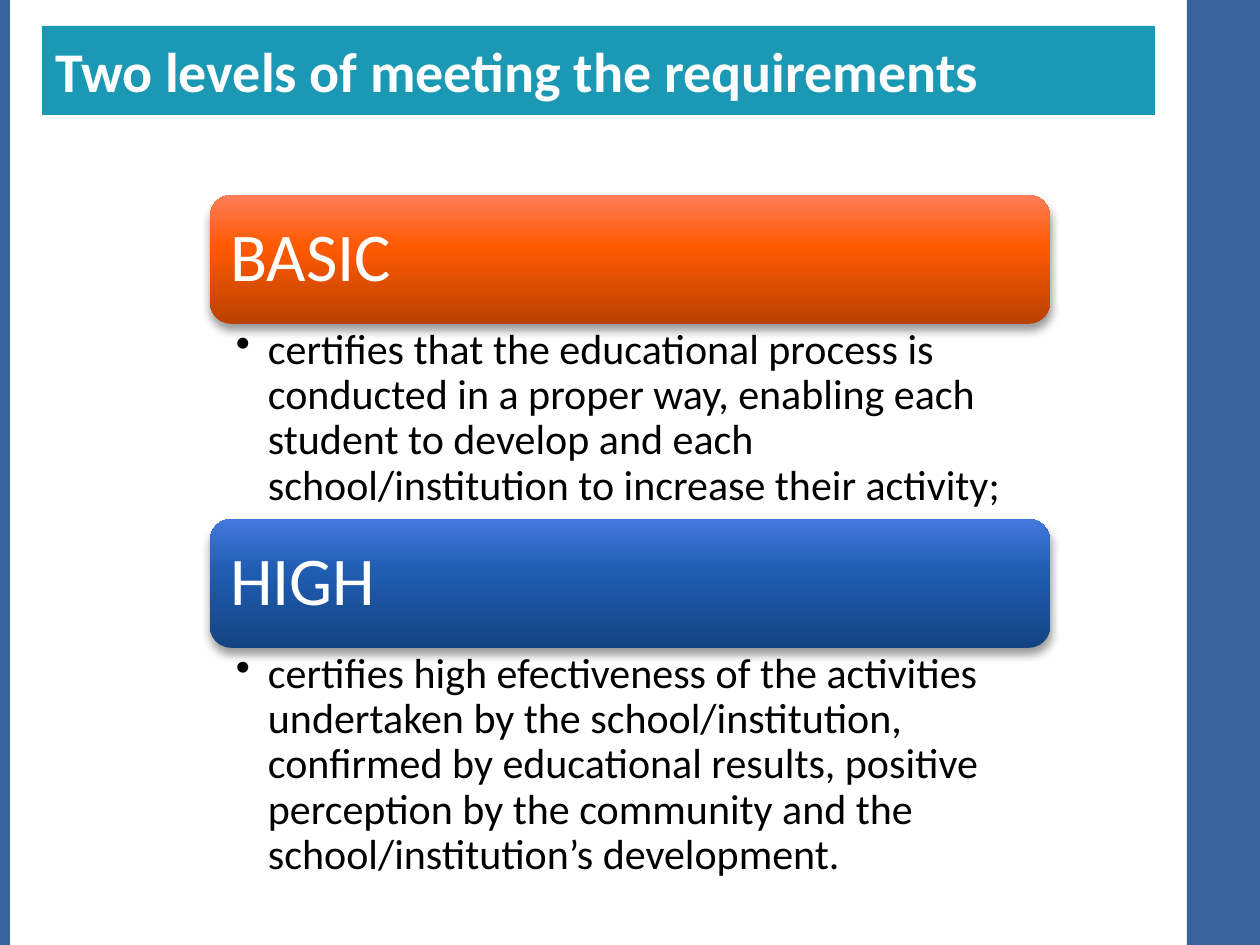
from copy import deepcopy

from lxml import etree
from pptx import Presentation
from pptx.dml.color import RGBColor
from pptx.enum.shapes import MSO_SHAPE
from pptx.enum.text import MSO_ANCHOR, PP_ALIGN
from pptx.oxml.ns import qn
from pptx.util import Pt

RECTANGLE = MSO_SHAPE.RECTANGLE
ROUNDED = MSO_SHAPE.ROUNDED_RECTANGLE
MIDDLE = MSO_ANCHOR.MIDDLE
TOP = MSO_ANCHOR.TOP
LEFT = PP_ALIGN.LEFT

EMU_PER_PX = 914400 / 126
WIDTH, HEIGHT = 1260, 945
FONT = "Calibri"

WHITE = RGBColor(0xFF, 0xFF, 0xFF)
BLACK = RGBColor(0x00, 0x00, 0x00)
SIDE_BLUE = RGBColor(0x39, 0x63, 0x9D)
TEAL = RGBColor(0x1B, 0x99, 0xB4)
ORANGES = [RGBColor(0xB9, 0x41, 0x00), RGBColor(0xFF, 0x5A, 0x01), RGBColor(0xFF, 0x7D, 0x59)]
BLUES = [RGBColor(0x15, 0x43, 0x82), RGBColor(0x1F, 0x5D, 0xB2), RGBColor(0x45, 0x78, 0xDB)]
GRADIENT_POSITIONS = [0, 0.6, 1]

HEADER_HEIGHT = 129
LEVELS = [
    ("BASIC", ORANGES, 195,
     "certifies that the educational process is conducted in a proper way, enabling each "
     "student to develop and each school/institution to increase their activity;"),
    ("HIGH", BLUES, 519,
     "certifies high efectiveness of the activities undertaken by the school/institution, "
     "confirmed by educational results, positive perception by the community and the "
     "school/institution’s development."),
]


def px(length):
    return round(length * EMU_PER_PX)


def add_block(slide, kind, left, top, width, height, color=None):
    shape = slide.shapes.add_shape(kind, px(left), px(top), px(width), px(height))
    shape.shadow.inherit = False
    shape.line.fill.background()
    if color is not None:
        shape.fill.solid()
        shape.fill.fore_color.rgb = color
    return shape


def set_text(shape, text, size, color, margins, anchor, bold=False):
    """Fill a shape with one left-aligned paragraph; margins are left, top, right, bottom."""
    frame = shape.text_frame
    frame.word_wrap = True
    frame.vertical_anchor = anchor
    frame.margin_left, frame.margin_top, frame.margin_right, frame.margin_bottom = map(px, margins)
    frame.text = text
    paragraph = frame.paragraphs[0]
    paragraph.alignment = LEFT
    font = paragraph.runs[0].font
    font.name, font.size, font.bold = FONT, Pt(size), bold
    font.color.rgb = color
    return paragraph


def fill_gradient(shape, colors):
    """Run three colours from the bottom of the shape to its top."""
    shape.fill.gradient()
    shape.fill.gradient_angle = 90
    stop_list = shape._element.spPr.find(qn("a:gradFill")).find(qn("a:gsLst"))
    stop_list.append(deepcopy(stop_list[-1]))
    for stop, position, color in zip(shape.fill.gradient_stops, GRADIENT_POSITIONS, colors):
        stop.position = position
        stop.color.rgb = color


def add_soft_shadow(shape):
    effects = shape._element.spPr.find(qn("a:effectLst"))
    shadow = etree.SubElement(effects, qn("a:outerShdw"), blurRad=str(Pt(5.2)),
                              dist=str(Pt(3)), dir="5400000", rotWithShape="0")
    color = etree.SubElement(shadow, qn("a:srgbClr"), val="000000")
    etree.SubElement(color, qn("a:alpha"), val="40000")


def add_bullet(paragraph, indent):
    properties = paragraph._p.get_or_add_pPr()
    properties.set("marL", str(px(indent)))
    properties.set("indent", str(-px(indent)))
    etree.SubElement(properties, qn("a:buChar"), char="•")


def add_side_bars(slide):
    for left, width in ((1187, WIDTH - 1187), (0, 10)):
        add_block(slide, RECTANGLE, left, 0, width, HEIGHT, SIDE_BLUE)


def add_title(slide, left, top, width, height):
    banner = add_block(slide, RECTANGLE, left, top, width, height, TEAL)
    set_text(banner, "Two levels of meeting the requirements", 32, WHITE,
             (13, 6, 13, 6), MIDDLE, bold=True)


def add_level(slide, left, top, width, height, name, colors, description):
    """Place a gradient header with its bulleted description below."""
    header = add_block(slide, ROUNDED, left, top, width, HEADER_HEIGHT)
    fill_gradient(header, colors)
    add_soft_shadow(header)
    set_text(header, name, 39, WHITE, (14, 14, 14, 14), MIDDLE).line_spacing = 0.9

    body = slide.shapes.add_textbox(px(left), px(top + HEADER_HEIGHT),
                                    px(width), px(height - HEADER_HEIGHT))
    paragraph = set_text(body, description, 24, BLACK, (26, 4, 24, 4), TOP)
    paragraph.line_spacing = 0.9
    add_bullet(paragraph, 32)


def main():
    presentation = Presentation()
    presentation.slide_width, presentation.slide_height = px(WIDTH), px(HEIGHT)
    slide = presentation.slides.add_slide(presentation.slide_layouts[6])
    add_side_bars(slide)
    add_title(slide, 42, 26, 1113, 89)
    bottoms = [LEVELS[1][2], 887]
    for (name, colors, top, description), bottom in zip(LEVELS, bottoms):
        add_level(slide, 210, top, 840, bottom - top, name, colors, description)
    presentation.save("out.pptx")


if __name__ == "__main__":
    main()
